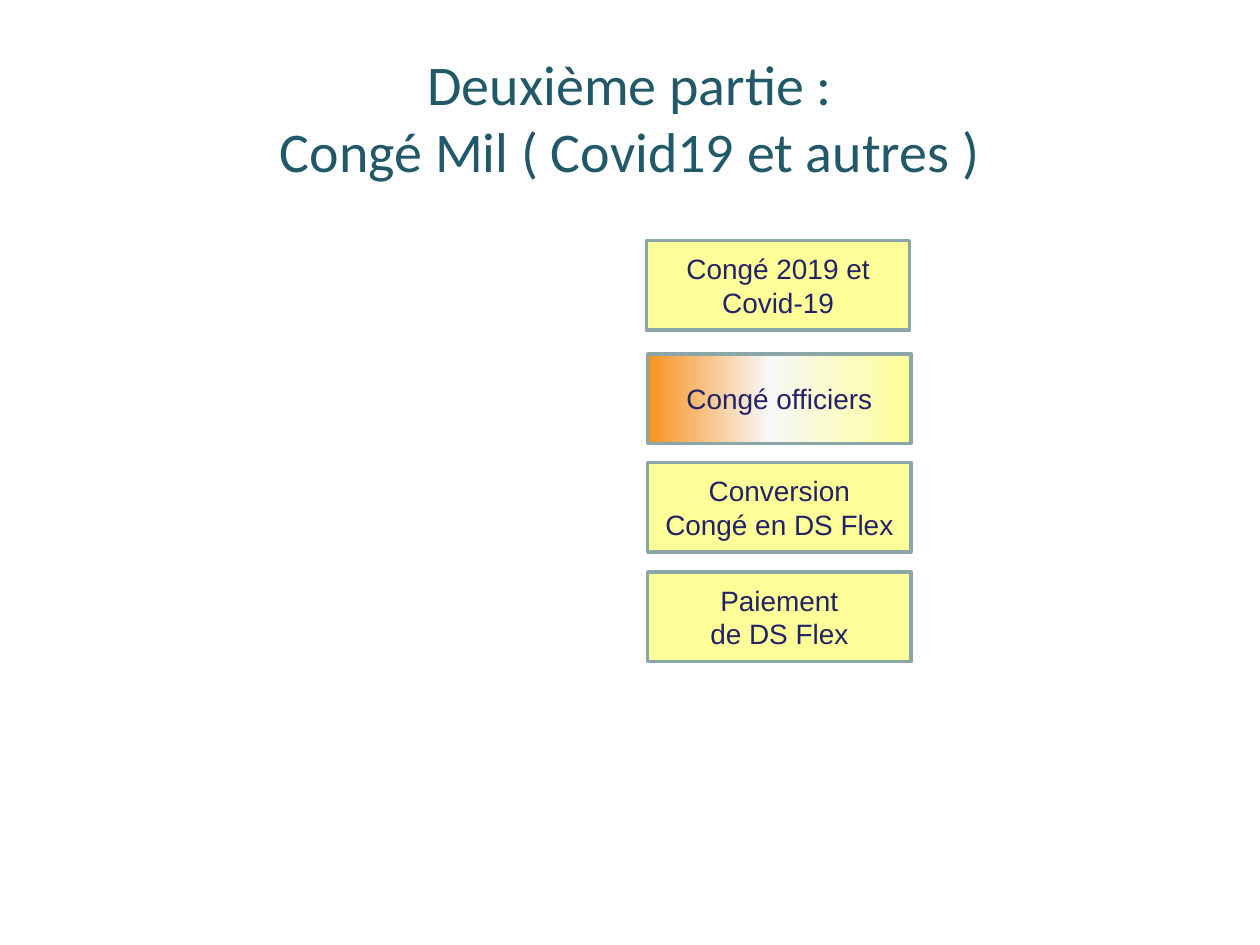
from copy import deepcopy

from pptx import Presentation, util as u
from pptx.dml.color import RGBColor
from pptx.enum import shapes, text
from pptx.oxml.ns import qn

TITLE = "Deuxième partie :\vCongé Mil ( Covid19 et autres )"
# wording, left, top, fill (one colour or gradient stops)
TOPICS = [
    ("Congé 2019 et Covid-19", 5.13, 1.91, "plain"),
    ("Congé officiers", 5.14, 2.81, "fade"),
    ("Conversion\nCongé en DS Flex", 5.14, 3.67, "plain"),
    ("Paiement\nde DS Flex", 5.14, 4.54, "plain"),
]
SIZE = (2.09, 0.71)

THEME = {
    "plain": "FFFF99",
    "fade": [(0, "FFFF99"), (0.54, "F7F7F7"), (1, "F7931F")],
    "line": "8AA6A8",
    "title": {"name": "Calibri", "size": u.Pt(32), "color": "215968"},
    "topic": {"name": "Arial", "size": u.Pt(16), "color": "222267"},
}


def write(shape, words, style):
    frame = shape.text_frame
    frame.text = words
    frame.word_wrap = True
    frame.vertical_anchor = text.MSO_ANCHOR.MIDDLE
    for para in frame.paragraphs:
        para.alignment = text.PP_ALIGN.CENTER
        for run in para.runs:
            for key, value in style.items():
                if key == "color":
                    run.font.color.rgb = RGBColor.from_string(value)
                else:
                    setattr(run.font, key, value)


def fade(shape, stops):
    """Fill with a gradient that runs from right to left."""
    fill = shape.fill
    fill.gradient()
    fill.gradient_angle = 180
    items = shape._element.spPr.find(".//" + qn("a:gsLst"))
    while len(items) < len(stops):
        items.append(deepcopy(items[0]))
    for stop, (place, color) in zip(fill.gradient_stops, stops):
        stop.position = place
        stop.color.rgb = RGBColor.from_string(color)


def add_topic(slide, words, left, top, kind):
    box = slide.shapes.add_shape(
        shapes.MSO_SHAPE.RECTANGLE, *map(u.Inches, (left, top, *SIZE)))
    box.shadow.inherit = False
    if kind == "fade":
        fade(box, THEME[kind])
    else:
        box.fill.solid()
        box.fill.fore_color.rgb = RGBColor.from_string(THEME[kind])
    box.line.color.rgb = RGBColor.from_string(THEME["line"])
    box.line.width = u.Pt(2)
    write(box, words, THEME["topic"])


def main():
    deck = Presentation()
    deck.slide_width, deck.slide_height = u.Inches(10), u.Inches(7.5)
    slide = deck.slides.add_slide(deck.slide_layouts[6])
    title = slide.shapes.add_textbox(*map(u.Inches, (0.5, 0.3, 9, 1.25)))
    write(title, TITLE, THEME["title"])
    for topic in TOPICS:
        add_topic(slide, *topic)
    deck.save("out.pptx")


if __name__ == "__main__":
    main()
